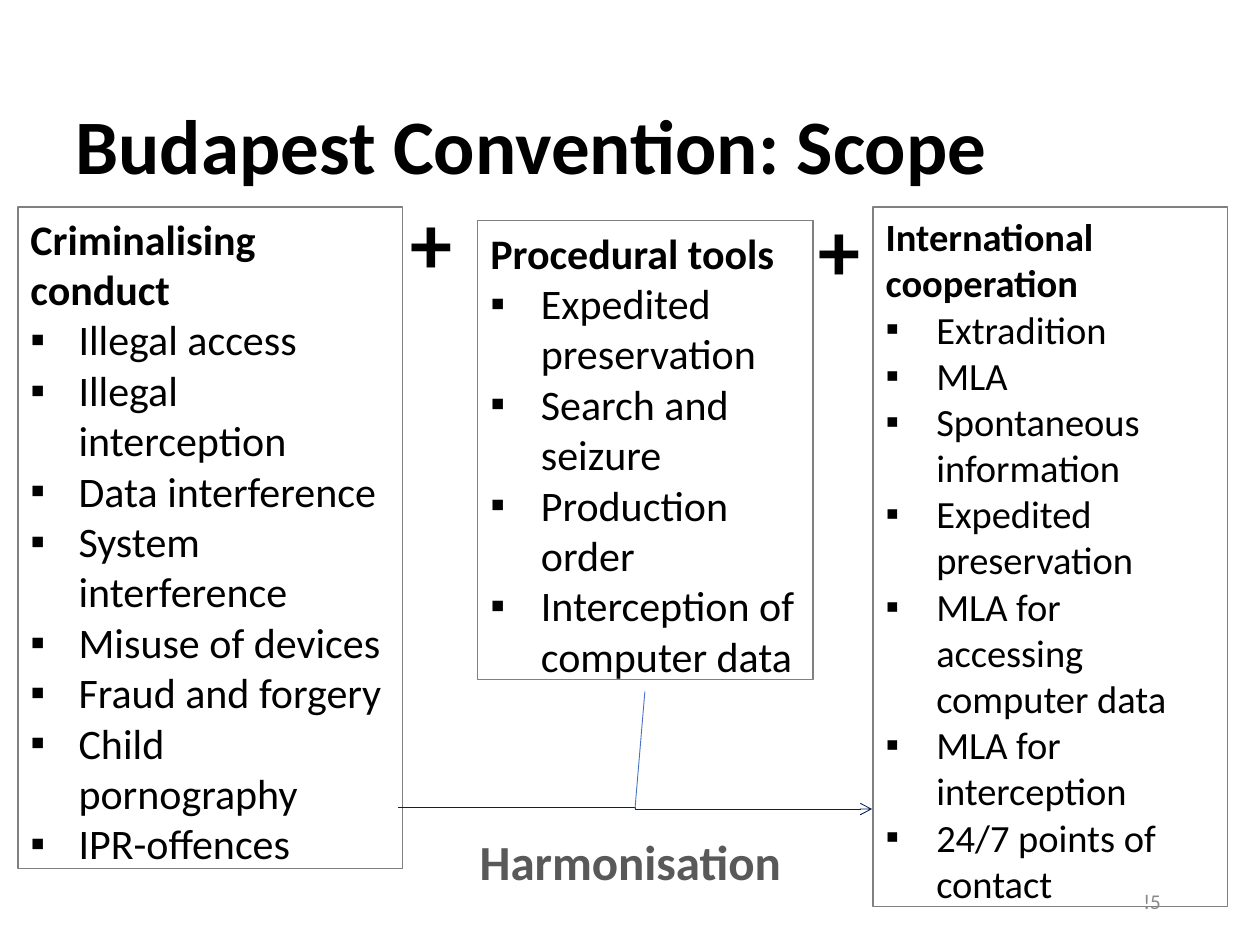
from lxml import etree
from pptx import Presentation
from pptx.dml.color import RGBColor
from pptx.enum.shapes import MSO_CONNECTOR
from pptx.enum.text import MSO_ANCHOR, MSO_AUTO_SIZE, PP_ALIGN
from pptx.oxml.ns import qn
from pptx.util import Cm, Pt

ELBOW, STRAIGHT = MSO_CONNECTOR.ELBOW, MSO_CONNECTOR.STRAIGHT
TOP, MIDDLE = MSO_ANCHOR.TOP, MSO_ANCHOR.MIDDLE
LEFT, RIGHT = PP_ALIGN.LEFT, PP_ALIGN.RIGHT
GROW, FIXED = MSO_AUTO_SIZE.SHAPE_TO_FIT_TEXT, MSO_AUTO_SIZE.NONE
FONT, BLACK = "Calibri", "000000"

TITLE = "Budapest Convention: Scope"
TITLE_AT = (1.27, 1.42, 22.86, 3.18)
PANELS = [
    {"idx": 2, "at": (0.36, 4.17, 7.75, 13.59), "size": 24, "indent": 0.97,
     "fill": "FFFFFF", "head": "Criminalising conduct",
     "items": ["Illegal access", "Illegal interception", "Data interference",
               "System interference", "Misuse of devices",
               "Fraud and forgery", "Child pornography", "IPR-offences"]},
    {"idx": 3, "at": (9.63, 4.45, 6.76, 9.5), "size": 24, "indent": 1.02,
     "fill": "FFFFFF", "head": "Procedural tools",
     "items": ["Expedited preservation", "Search and seizure",
               "Production order", "Interception of computer data"]},
    {"idx": 4, "at": (17.6, 4.17, 7.14, 14.35), "size": 22, "indent": 1.02,
     "fill": None, "head": "International cooperation",
     "items": ["Extradition", "MLA", "Spontaneous information",
               "Expedited preservation", "MLA for accessing computer data",
               "MLA for interception", "24/7 points of contact"]},
]
LABELS = [
    ("+", (8.03, 3.71, 1.78, 2.31), 48, BLACK, True, LEFT, TOP),
    ("+", (16.26, 3.86, 1.78, 2.31), 48, BLACK, True, LEFT, TOP),
    ("Harmonisation", (9.42, 16.64, 6.78, 1.45), 28, "595959", True, LEFT, TOP),
    ("!5", (17.93, 17.65, 5.72, 1.02), 12, "898989", False, RIGHT, MIDDLE),
]
LINES = [
    (ELBOW, (8.03, 16.28, 17.58, 16.31), "002060", True),
    (STRAIGHT, (13.0, 13.94, 12.8, 16.31), "4472C4", False),
]


def rgb(code):
    """Turn a hex string into a colour."""
    return RGBColor.from_string(code)


def place(sp, at):
    """Move and size a shape, in centimetres."""
    sp.left, sp.top, sp.width, sp.height = map(Cm, at)


def style(p, size, color, bold, align=LEFT):
    """Format a paragraph and its runs."""
    p.alignment = align
    p.space_before = Pt(0)
    for r in p.runs:
        r.font.name, r.font.size, r.font.bold = FONT, Pt(size), bold
        r.font.color.rgb = rgb(color)


def set_bullet(p, indent):
    """Give a paragraph a hanging square bullet, or none at zero indent."""
    pPr = p._p.get_or_add_pPr()
    pPr.set("marL", str(Cm(indent)))
    pPr.set("indent", str(-Cm(indent)))
    if indent:
        etree.SubElement(pPr, qn("a:buFont")).set("typeface", "Arial")
        etree.SubElement(pPr, qn("a:buChar")).set("char", "▪")
    else:
        etree.SubElement(pPr, qn("a:buNone"))


def add_panel(sp, panel):
    """Fill a body placeholder with a heading and its list."""
    place(sp, panel["at"])
    if panel["fill"]:
        sp.fill.solid()
        sp.fill.fore_color.rgb = rgb(panel["fill"])
    sp.line.color.rgb = rgb("808080")
    sp.line.width = Pt(0.75)
    tf = sp.text_frame
    tf.text = "\n".join([panel["head"], *panel["items"]])
    tf.vertical_anchor, tf.auto_size = TOP, GROW
    for i, p in enumerate(tf.paragraphs):
        set_bullet(p, panel["indent"] if i else 0)
        style(p, panel["size"], BLACK, i == 0)


def add_label(s, text, at, size, color, bold, align, anchor):
    """Add a one-line text box."""
    tf = s.shapes.add_textbox(*map(Cm, at)).text_frame
    tf.text = text
    tf.word_wrap, tf.vertical_anchor = True, anchor
    style(tf.paragraphs[0], size, color, bold, align)


def add_line(s, kind, ends, color, arrow):
    """Add a thin connector, with an arrowhead if asked."""
    c = s.shapes.add_connector(kind, *map(Cm, ends))
    c.line.color.rgb = rgb(color)
    c.line.width = Pt(0.5)
    if arrow:
        etree.SubElement(c.line._get_or_add_ln(), qn("a:tailEnd")).set("type", "arrow")
    etree.SubElement(c._element.spPr, qn("a:effectLst"))


def main():
    """Build and save the slide."""
    prs = Presentation()
    prs.slide_width, prs.slide_height = Cm(25.4), Cm(19.05)
    s = prs.slides.add_slide(prs.slide_layouts.get_by_name("Comparison"))
    title = s.shapes.title
    place(title, TITLE_AT)
    tf = title.text_frame
    tf.text = TITLE
    tf.vertical_anchor, tf.auto_size = MIDDLE, FIXED
    tf.paragraphs[0].line_spacing = 0.9
    style(tf.paragraphs[0], 44, BLACK, True)

    bodies = {sp.placeholder_format.idx: sp for sp in s.placeholders}
    for panel in PANELS:
        add_panel(bodies[panel["idx"]], panel)
    unused = bodies[1]._element
    unused.getparent().remove(unused)
    for label in LABELS:
        add_label(s, *label)
    for line in LINES:
        add_line(s, *line)
    prs.save("out.pptx")


if __name__ == "__main__":
    main()
